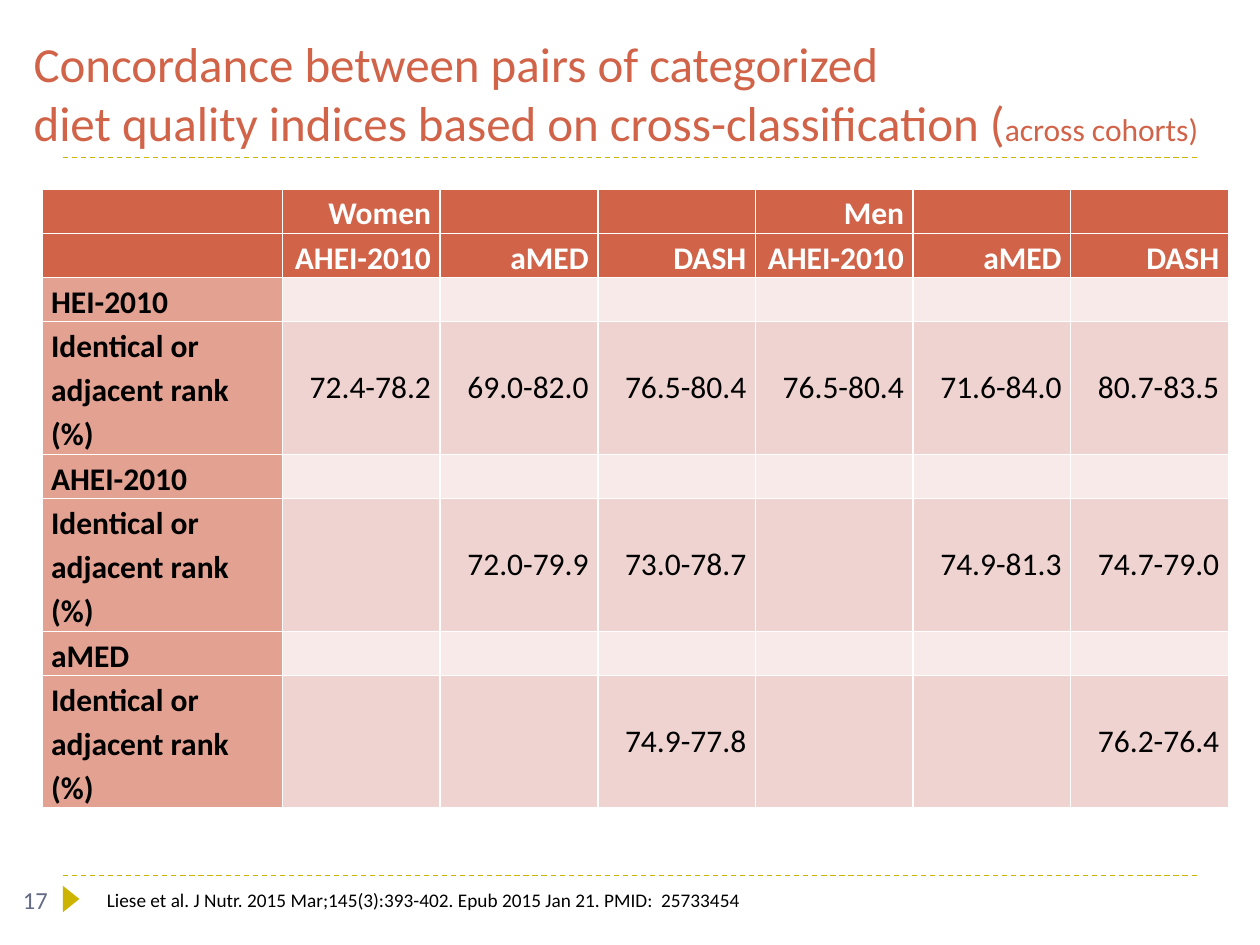
from dataclasses import dataclass
from typing import NamedTuple

from lxml.etree import SubElement
from pptx import Presentation
from pptx.dml.color import RGBColor
from pptx.enum.dml import MSO_LINE
from pptx.enum.shapes import MSO_CONNECTOR, MSO_SHAPE
from pptx.enum.text import MSO_ANCHOR, MSO_AUTO_SIZE, PP_ALIGN
from pptx.oxml.ns import qn
from pptx.util import Pt


@dataclass(frozen=True)
class Theme:
    face: str = "Calibri"
    red: str = "D16349"
    rose: str = "E3A192"
    pink: str = "EED3D0"
    pale: str = "F7EAE9"
    gold: str = "CCB400"
    slate: str = "646B86"
    black: str = "000000"
    white: str = "FFFFFF"
    title: int = 28
    body: int = 18
    page: int = 14
    cite: int = 11


class Box(NamedTuple):
    left: float
    top: float
    width: float
    height: float

    def points(self):
        return [Pt(n) for n in self]


class Note(NamedTuple):
    text: str
    box: Box
    size: int
    color: str


class Row(NamedTuple):
    label: str
    cells: list[str]
    kind: str


THEME = Theme()
RANK = "Identical or adjacent rank (%)"
BLANK = [""] * 6
ROWS = [
    Row("", ["Women", "", "", "Men", "", ""], "head"),
    Row("", ["AHEI-2010", "aMED", "DASH"] * 2, "head"),
    Row("HEI-2010", BLANK, "group"),
    Row(RANK, ["72.4-78.2", "69.0-82.0", "76.5-80.4",
               "76.5-80.4", "71.6-84.0", "80.7-83.5"], "data"),
    Row("AHEI-2010", BLANK, "group"),
    Row(RANK, ["", "72.0-79.9", "73.0-78.7",
               "", "74.9-81.3", "74.7-79.0"], "data"),
    Row("aMED", BLANK, "group"),
    Row(RANK, ["", "", "74.9-77.8", "", "", "76.2-76.4"], "data"),
]
FILLS = {
    "head": (THEME.red, THEME.red),
    "group": (THEME.rose, THEME.pale),
    "data": (THEME.rose, THEME.pink),
}
NOTES = [
    Note("17", Box(6, 502, 156, 29), THEME.page, THEME.slate),
    Note("Liese et al. J Nutr. 2015 Mar;145(3):393-402. "
         "Epub 2015 Jan 21. PMID:  25733454",
         Box(54, 504, 402, 21), THEME.cite, THEME.black),
]
LINE = 25.2
FIRST, OTHER = 137.4, 90.1


def style(font, size: int, color: str, bold: bool = False) -> None:
    font.name = THEME.face
    font.size = Pt(size)
    font.bold = bold
    font.color.rgb = RGBColor.from_string(color)


def draw_title(slide) -> None:
    shape = slide.shapes.title
    shape.left, shape.top, shape.width, shape.height = Box(12, 12, 696, 78).points()
    frame = shape.text_frame
    frame.auto_size = MSO_AUTO_SIZE.NONE
    frame.vertical_anchor = MSO_ANCHOR.BOTTOM
    para = frame.paragraphs[0]
    para.alignment = PP_ALIGN.LEFT
    style(para.font, THEME.title, THEME.red)
    para.add_run().text = "Concordance between pairs of categorized "
    para.add_line_break()
    para.add_run().text = "diet quality indices based on cross-classification ("
    tail = para.add_run()
    tail.text = "across cohorts)"
    tail.font.size = Pt(THEME.body)


def draw_rule(slide, top: float) -> None:
    rule = slide.shapes.add_connector(
        MSO_CONNECTOR.STRAIGHT, Pt(36), Pt(top), Pt(684), Pt(top))
    rule.line.color.rgb = RGBColor.from_string(THEME.gold)
    rule.line.width = Pt(0.75)
    rule.line.dash_style = MSO_LINE.DASH
    SubElement(rule._element.spPr, qn("a:effectLst"))


def draw_mark(slide) -> None:
    mark = slide.shapes.add_shape(
        MSO_SHAPE.ISOSCELES_TRIANGLE, *Box(33.1, 509, 15.1, 9.4).points())
    mark.rotation = 90
    mark.shadow.inherit = False
    mark.fill.solid()
    mark.fill.fore_color.rgb = RGBColor.from_string(THEME.gold)
    mark.line.fill.background()


def draw_note(slide, note: Note) -> None:
    frame = slide.shapes.add_textbox(*note.box.points()).text_frame
    frame.word_wrap = True
    para = frame.paragraphs[0]
    para.text = note.text
    style(para.font, note.size, note.color)


def edge_cell(cell) -> None:
    props = cell._tc.get_or_add_tcPr()
    for spot, side in enumerate(("lnL", "lnR", "lnT", "lnB")):
        line = props.makeelement(qn(f"a:{side}"), {"w": str(Pt(1))})
        fill = SubElement(line, qn("a:solidFill"))
        SubElement(fill, qn("a:srgbClr"), val=THEME.white)
        props.insert(spot, line)


def fill_cell(cell, text: str, row: Row, label: bool) -> None:
    head = row.kind == "head"
    cell.margin_left = cell.margin_right = Pt(5.2)
    cell.margin_top = cell.margin_bottom = Pt(0)
    top = row is ROWS[0]
    cell.vertical_anchor = MSO_ANCHOR.BOTTOM if top else MSO_ANCHOR.MIDDLE
    cell.fill.solid()
    cell.fill.fore_color.rgb = RGBColor.from_string(FILLS[row.kind][not label])
    edge_cell(cell)
    para = cell.text_frame.paragraphs[0]
    para.text = text
    para.alignment = PP_ALIGN.LEFT if label else PP_ALIGN.RIGHT
    if head or label:
        para.line_spacing = 1.15
    style(para.font, THEME.body, THEME.white if head else THEME.black, head or label)


def draw_table(slide) -> None:
    box = Box(24, 108, FIRST + 6 * OTHER, 14 * LINE)
    table = slide.shapes.add_table(len(ROWS), 7, *box.points()).table
    table.first_row = table.horz_banding = False
    for spot, column in enumerate(table.columns):
        column.width = Pt(OTHER if spot else FIRST)
    for line, row in zip(table.rows, ROWS):
        line.height = Pt(LINE * (3 if row.kind == "data" else 1))
        for spot, text in enumerate([row.label, *row.cells]):
            fill_cell(line.cells[spot], text, row, spot == 0)


def main() -> None:
    deck = Presentation()
    deck.slide_width, deck.slide_height = Pt(720), Pt(540)
    slide = deck.slides.add_slide(deck.slide_layouts[5])
    for top in (500.4, 90):
        draw_rule(slide, top)
    draw_mark(slide)
    draw_title(slide)
    draw_table(slide)
    for note in NOTES:
        draw_note(slide, note)
    deck.save("out.pptx")


if __name__ == "__main__":
    main()
